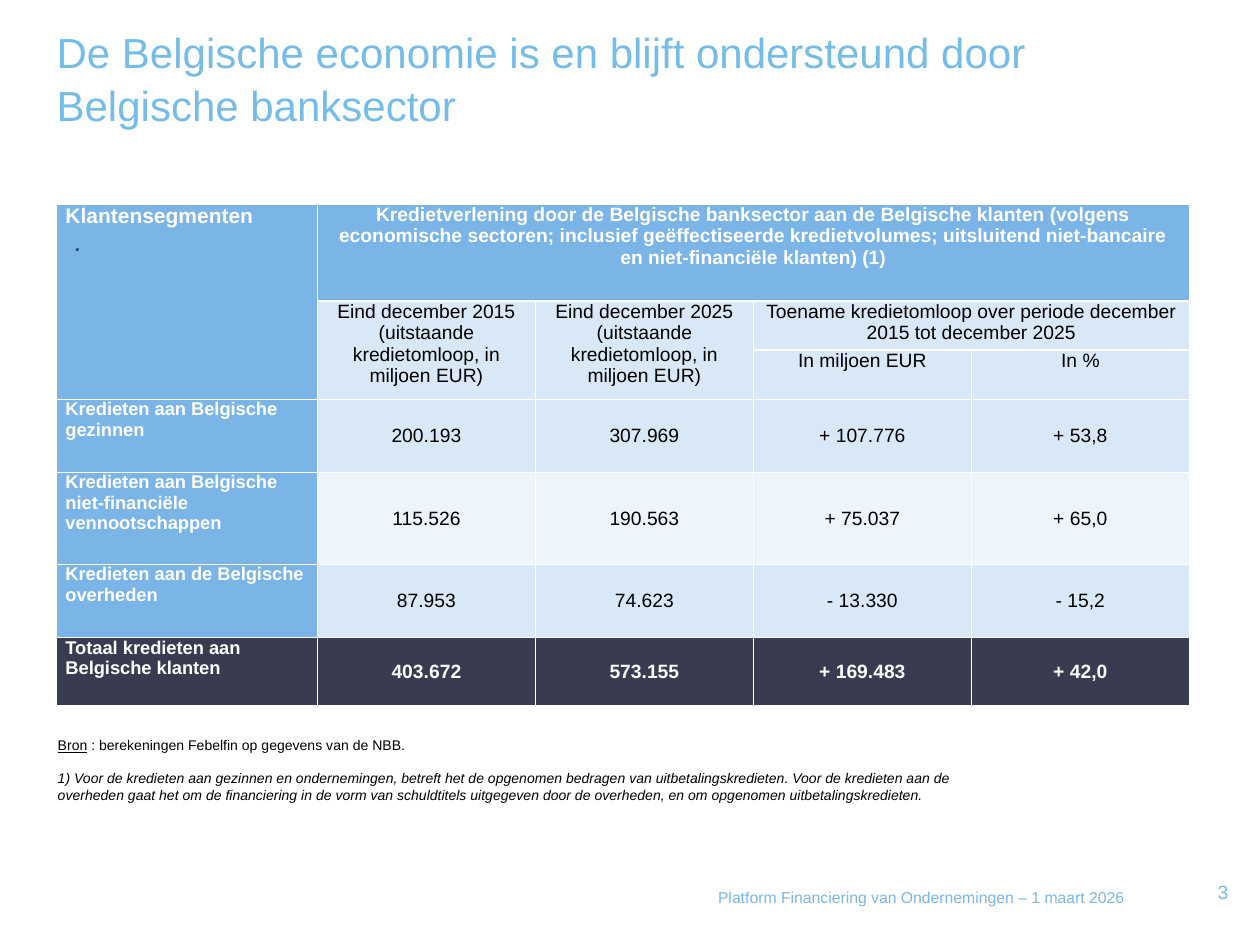
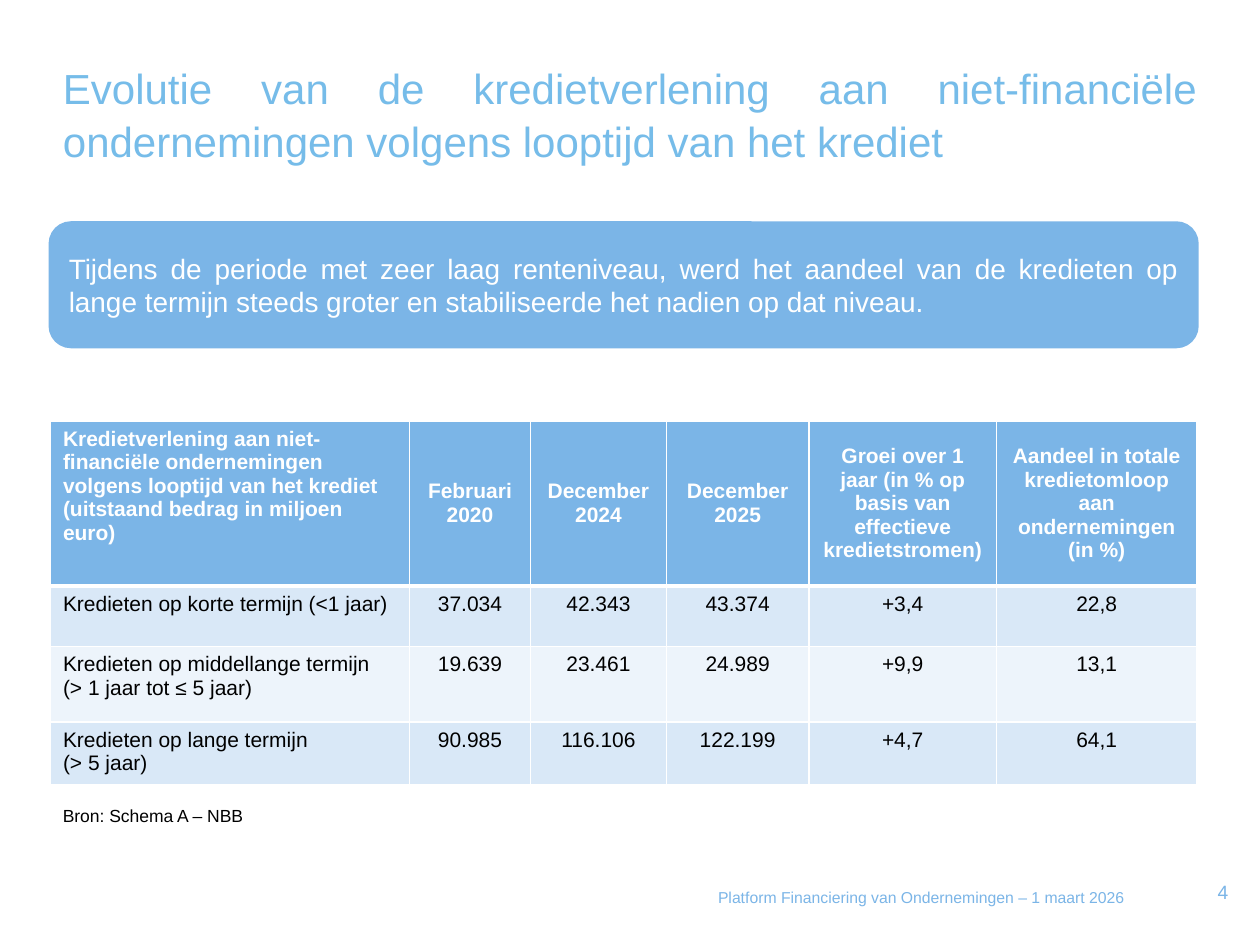
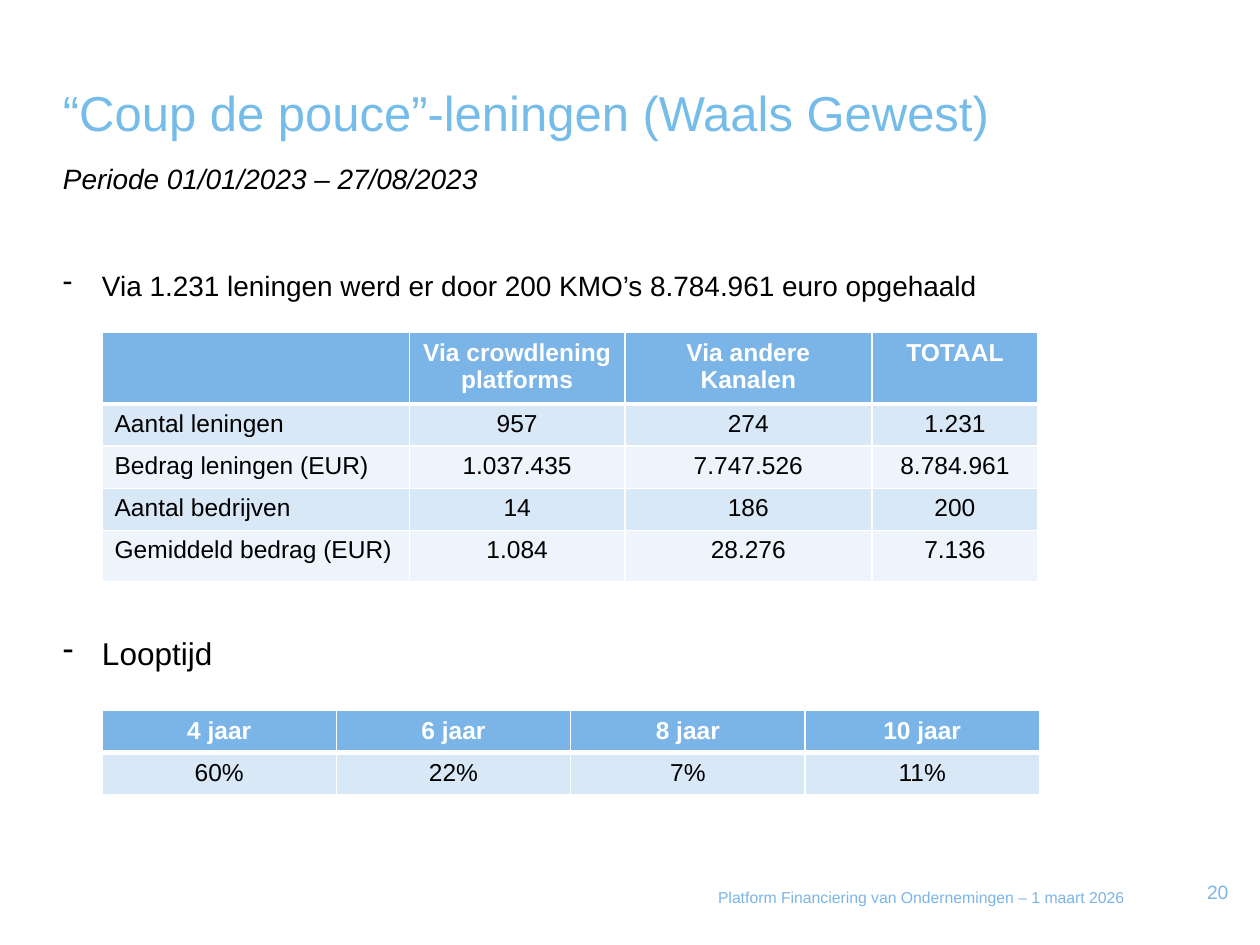
from lxml.etree import SubElement
from pptx import Presentation
from pptx.dml.color import RGBColor
from pptx.enum.shapes import MSO_SHAPE
from pptx.enum.text import MSO_ANCHOR, PP_ALIGN
from pptx.oxml.ns import qn
from pptx.util import Inches, Pt

WIDTH, HEIGHT = Inches(10), Inches(7.5)
COLUMNS, ROWS = 10, 7.5
FONT = "Arial"
TITLE_BLUE, BLUE, LIGHT, PALE = "76BCE9", "7BB5E7", "D9E8F7", "EDF4FB"
DARK, NAVY, WHITE, BLACK = "393C50", "1F497D", "FFFFFF", "000000"
FOOTER = "Platform Financiering van Ondernemingen – 1 maart 2026"
LEFT, CENTER, RIGHT, JUSTIFY = PP_ALIGN.LEFT, PP_ALIGN.CENTER, PP_ALIGN.RIGHT, PP_ALIGN.JUSTIFY
TOP, MIDDLE = MSO_ANCHOR.TOP, MSO_ANCHOR.MIDDLE
CELL_INSET = (0.1, 0.05)


def color(value):
    return RGBColor.from_string(value)


def across(columns):
    return int(WIDTH * columns / COLUMNS)


def down(rows):
    return int(HEIGHT * rows / ROWS)


def area(left, top, width, height):
    return across(left), down(top), across(width), down(height)


def apply(target, values):
    for name, value in values.items():
        setattr(target, name, value)


def add_run(paragraph, text, size, fill=BLACK, **font):
    run = paragraph.add_run()
    run.text = text
    apply(run.font, {"name": FONT, "size": Pt(size), **font})
    run.font.color.rgb = color(fill)


def add_paragraph(frame, align=LEFT, **layout):
    first = frame.paragraphs[0]
    paragraph = frame.add_paragraph() if first.runs else first
    apply(paragraph, {"alignment": align, **layout})
    return paragraph


def set_insets(target, horizontal, vertical):
    apply(target, {
        "margin_left": across(horizontal), "margin_right": across(horizontal),
        "margin_top": down(vertical), "margin_bottom": down(vertical),
    })


def add_box(slide, place, inset=CELL_INSET, anchor=TOP, wrap=True):
    frame = slide.shapes.add_textbox(*area(*place)).text_frame
    apply(frame, {"word_wrap": wrap, "vertical_anchor": anchor})
    set_insets(frame, *inset)
    return frame


def add_title(slide, text, place, size=24, align=LEFT):
    frame = add_box(slide, place, (0, 0))
    add_run(add_paragraph(frame, align, line_spacing=1.05), text, size, TITLE_BLUE)


def add_footer(slide, number):
    number_frame = add_box(slide, (9.45, 6.99, 0.3, 0.18), (0, 0), MIDDLE)
    add_run(add_paragraph(number_frame, RIGHT), number, 11, BLUE)
    footer_frame = add_box(slide, (5.6, 7, 3.85, 0.18))
    add_run(add_paragraph(footer_frame), FOOTER, 9, BLUE)


def add_banner(slide, text, place):
    banner = slide.shapes.add_shape(MSO_SHAPE.ROUNDED_RECTANGLE, *area(*place))
    banner.shadow.inherit = False
    banner.fill.solid()
    banner.fill.fore_color.rgb = color(BLUE)
    banner.line.color.rgb = color(BLUE)
    banner.line.width = Pt(2)
    banner.text_frame.word_wrap = True
    banner.text_frame.vertical_anchor = MIDDLE
    add_run(add_paragraph(banner.text_frame, JUSTIFY), text, 16, WHITE)


def add_dash_item(frame, text, size, **layout):
    paragraph = add_paragraph(frame, **layout)
    properties = paragraph._p.get_or_add_pPr()
    properties.set("marL", str(across(0.31)))
    properties.set("indent", str(-across(0.31)))
    SubElement(properties, qn("a:buChar"), char="-")
    add_run(paragraph, text, size)


def add_borders(cell, bottom):
    properties = cell._tc.get_or_add_tcPr()
    for side, width in {"L": 1, "R": 1, "T": 1, "B": bottom}.items():
        line = SubElement(properties, qn(f"a:ln{side}"), w=str(Pt(width)))
        fill = SubElement(line, qn("a:solidFill"))
        SubElement(fill, qn("a:srgbClr"), val=WHITE)


def format_cell(cell, text, background, fill, size, bold, align,
                anchor=TOP, inset=CELL_INSET, bottom=1):
    add_borders(cell, bottom)
    cell.fill.solid()
    cell.fill.fore_color.rgb = color(background)
    cell.vertical_anchor = anchor
    set_insets(cell, *inset)
    if text:
        for line in text.split("\n"):
            add_run(add_paragraph(cell.text_frame, align), line, size, fill, bold=bold)


def add_grid(slide, corner, widths, heights, rows, style):
    place = area(*corner, sum(widths), sum(heights))
    table = slide.shapes.add_table(len(heights), len(widths), *place).table
    for column, width in zip(table.columns, widths):
        column.width = across(width)
    for row, height in zip(table.rows, heights):
        row.height = down(height)
    for row, texts in enumerate(rows):
        for column, text in enumerate(texts):
            format_cell(table.cell(row, column), text, **style(row, column))
    return table


def banded_style(size, header_anchor=TOP, centered_first=False):
    def style(row, column):
        header = row == 0
        centered = column > 0 or centered_first
        return {
            "background": BLUE if header else (PALE, LIGHT)[row % 2],
            "fill": WHITE if header else BLACK,
            "size": size,
            "bold": header,
            "align": CENTER if centered else LEFT,
            "anchor": header_anchor if header and column else TOP,
            "bottom": 3 if header else 1,
        }
    return style


def segment_style(row, column):
    total, label = row == 6, column == 0
    strong = row == 0 or total or label
    body = PALE if row == 4 else LIGHT
    label_size = 12 if row == 0 else 10.5
    return {
        "background": DARK if total else BLUE if strong else body,
        "fill": WHITE if strong else BLACK,
        "size": label_size if label else 11,
        "bold": strong,
        "align": LEFT if label else CENTER,
        "anchor": MIDDLE if row > 2 and not label else TOP,
        "inset": (0.07, 0),
    }


def build_segments(slide):
    add_title(slide, "De Belgische economie is en blijft ondersteund door Belgische banksector",
              (0.45, 0.19, 9, 1.21))
    rows = [
        ["Klantensegmenten",
         "Kredietverlening door de Belgische banksector aan de Belgische klanten (volgens "
         "economische sectoren; inclusief geëffectiseerde kredietvolumes; uitsluitend "
         "niet-bancaire en niet-financiële klanten) (1)", "", "", ""],
        ["", "Eind december 2015 (uitstaande kredietomloop, in miljoen EUR)",
         "Eind december 2025 (uitstaande kredietomloop, in miljoen EUR)",
         "Toename kredietomloop over periode december 2015 tot december 2025", ""],
        ["", "", "", "In miljoen EUR", "In %"],
        ["Kredieten aan Belgische gezinnen", "200.193", "307.969", "+ 107.776", "+ 53,8"],
        ["Kredieten aan Belgische niet-financiële vennootschappen",
         "115.526", "190.563", "+ 75.037", "+ 65,0"],
        ["Kredieten aan de Belgische overheden", "87.953", "74.623", "- 13.330", "- 15,2"],
        ["Totaal kredieten aan Belgische klanten", "403.672", "573.155", "+ 169.483", "+ 42,0"],
    ]
    table = add_grid(slide, (0.45, 1.62), [2.07] + [1.73] * 4,
                     [0.77, 0.39, 0.39, 0.58, 0.73, 0.58, 0.54], rows, segment_style)
    for start, end in [((0, 0), (2, 0)), ((0, 1), (0, 4)), ((1, 1), (2, 1)),
                       ((1, 2), (2, 2)), ((1, 3), (1, 4))]:
        table.cell(*start).merge(table.cell(*end))
    dot = add_box(slide, (0.5, 1.79, 0.29, 0.29), anchor=MIDDLE, wrap=False)
    add_run(add_paragraph(dot), ".", 11, NAVY, bold=True, italic=True)
    notes = add_box(slide, (0.36, 5.8, 7.48, 0.64))
    source = add_paragraph(notes)
    add_run(source, "Bron", 8, underline=True)
    add_run(source, " : berekeningen Febelfin op gegevens van de NBB.", 8)
    add_run(add_paragraph(notes, space_before=Pt(9)),
            "1) Voor de kredieten aan gezinnen en ondernemingen, betreft het de opgenomen "
            "bedragen van uitbetalingskredieten. Voor de kredieten aan de overheden gaat het "
            "om de financiering in de vorm van schuldtitels uitgegeven door de overheden, en "
            "om opgenomen uitbetalingskredieten.", 8, italic=True)


def build_maturities(slide):
    add_title(slide, "Evolutie van de kredietverlening aan niet-financiële ondernemingen "
              "volgens looptijd van het krediet", (0.5, 0.48, 9, 0.81), align=JUSTIFY)
    source = add_box(slide, (0.4, 6.34, 8.53, 0.27))
    add_run(add_paragraph(source), "Bron: Schema A – NBB", 10)
    rows = [
        ["Kredietverlening aan niet-financiële ondernemingen volgens looptijd van het krediet "
         "(uitstaand bedrag in miljoen euro)", "Februari 2020", "December 2024",
         "December 2025", "Groei over 1 jaar (in % op basis van effectieve kredietstromen)",
         "Aandeel in totale kredietomloop aan ondernemingen\n(in %)"],
        ["Kredieten op korte termijn (<1 jaar)", "37.034", "42.343", "43.374", "+3,4", "22,8"],
        ["Kredieten op middellange termijn\n(> 1 jaar tot ≤ 5 jaar)",
         "19.639", "23.461", "24.989", "+9,9", "13,1"],
        ["Kredieten op lange termijn\n(> 5 jaar)",
         "90.985", "116.106", "122.199", "+4,7", "64,1"],
    ]
    add_grid(slide, (0.4, 3.34), [2.85, 0.96, 1.08, 1.13, 1.49, 1.59],
             [1.31, 0.48, 0.6, 0.48], rows, banded_style(12, MIDDLE))
    add_banner(slide, "Tijdens de periode met zeer laag renteniveau, werd het aandeel van de "
               "kredieten op lange termijn steeds groter en stabiliseerde het nadien op dat "
               "niveau.", (0.4, 1.77, 9.1, 0.98))


def build_loans(slide):
    add_title(slide, "“Coup de pouce”-leningen (Waals Gewest)", (0.5, 0.63, 9, 0.47), 28)
    body = add_box(slide, (0.5, 1.28, 9, 5.27), (0, 0))
    add_run(add_paragraph(body), "Periode 01/01/2023 – 27/08/2023", 16, italic=True)
    add_dash_item(body, "Via 1.231 leningen werd er door 200 KMO’s 8.784.961 euro opgehaald",
                  16, space_before=Pt(40), line_spacing=1.1)
    add_dash_item(body, "Looptijd", 18, space_before=Pt(190))
    terms = [["4 jaar", "6 jaar", "8 jaar", "10 jaar"], ["60%", "22%", "7%", "11%"]]
    add_grid(slide, (0.81, 5.64), [1.86] * 4, [0.31] * 2, terms,
             banded_style(14, centered_first=True))
    channels = [
        ["", "Via crowdlening platforms", "Via andere\nKanalen", "TOTAAL"],
        ["Aantal leningen", "957", "274", "1.231"],
        ["Bedrag leningen (EUR)", "1.037.435", "7.747.526", "8.784.961"],
        ["Aantal bedrijven", "14", "186", "200"],
        ["Gemiddeld bedrag (EUR)", "1.084", "28.276", "7.136"],
    ]
    add_grid(slide, (0.81, 2.64), [2.44, 1.71, 1.96, 1.32],
             [0.53, 0.33, 0.31, 0.32, 0.41], channels, banded_style(14))


def main():
    presentation = Presentation()
    apply(presentation, {"slide_width": WIDTH, "slide_height": HEIGHT})
    for number, build in {"3": build_segments, "4": build_maturities, "20": build_loans}.items():
        slide = presentation.slides.add_slide(presentation.slide_layouts[6])
        build(slide)
        add_footer(slide, number)
    presentation.save("out.pptx")


if __name__ == "__main__":
    main()
